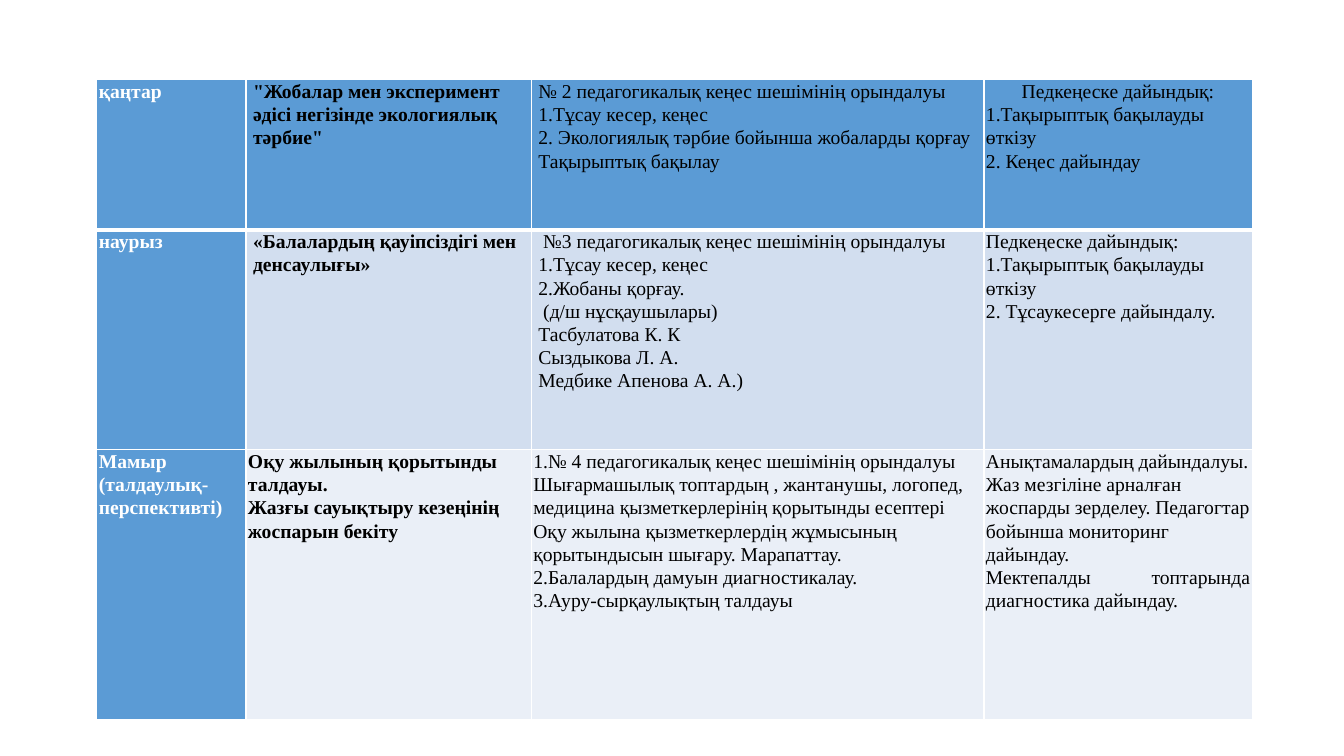
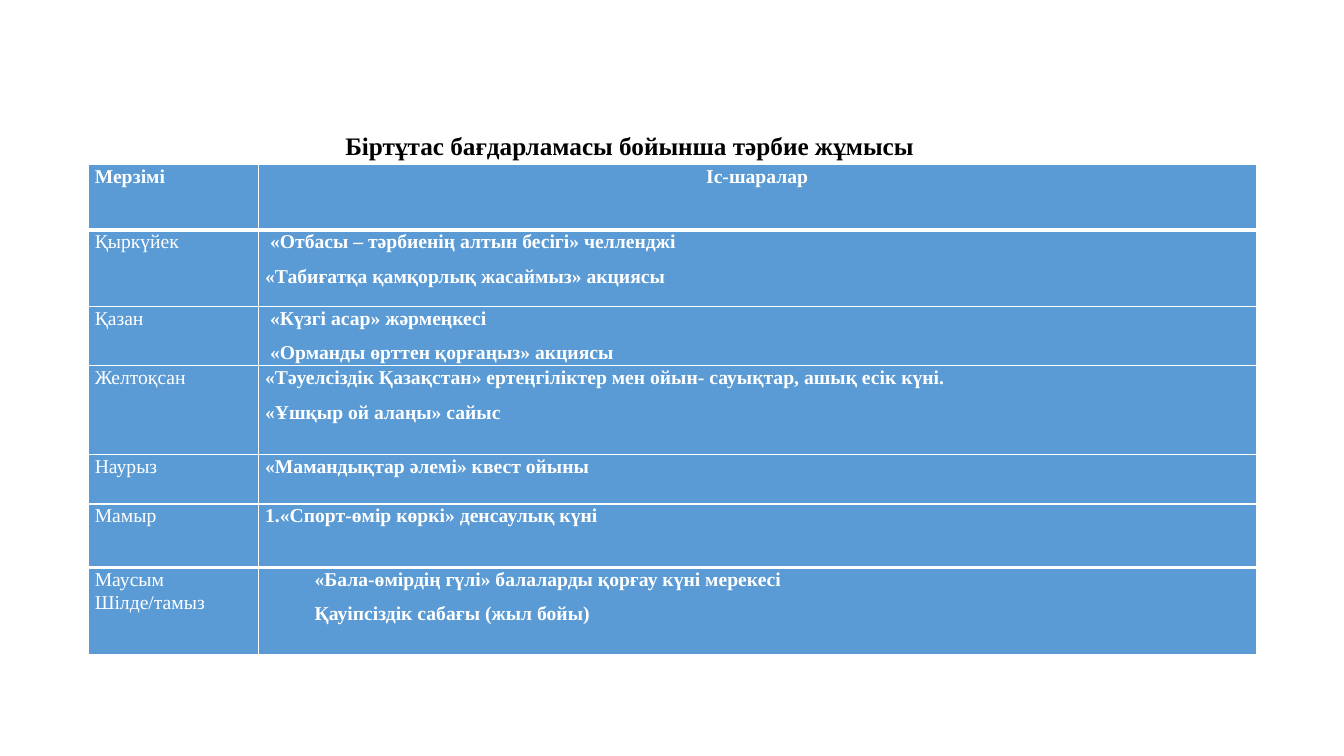
from dataclasses import dataclass, replace
from typing import Optional, Union

from lxml.etree import SubElement
from pptx import Presentation
from pptx.dml.color import RGBColor
from pptx.enum.text import MSO_ANCHOR, PP_ALIGN
from pptx.oxml.ns import qn
from pptx.util import Inches, Pt

BLUE = RGBColor(0x5B, 0x9B, 0xD5)
MID_BLUE = RGBColor(0xD2, 0xDE, 0xEF)
PALE_BLUE = RGBColor(0xEA, 0xEF, 0xF7)
WHITE = RGBColor(0xFF, 0xFF, 0xFF)
BLACK = RGBColor(0x00, 0x00, 0x00)
FONT = "Times New Roman"
BODY_SIZE = 14
TITLE_SIZE = 18
LINE_SPACING = 1.07
THIN, THICK = 1, 3


@dataclass(frozen=True)
class Style:
    inset: float
    color: RGBColor = WHITE
    bold: bool = False
    after: float = 0
    indent: float = 0
    align: Optional[PP_ALIGN] = None


@dataclass(frozen=True)
class Para:
    """A paragraph whose alignment differs from the rest of its cell."""
    text: str
    align: PP_ALIGN


@dataclass(frozen=True)
class Cell:
    paras: tuple[Union[str, Para], ...]
    style: Style
    fill: RGBColor = BLUE


@dataclass(frozen=True)
class Grid:
    left: float
    top: float
    cols: tuple[float, ...]
    rows: tuple[float, ...]
    cells: list[list[Cell]]
    thick_rules: tuple[int, ...]  # numbers of the rows above a thick rule


def add_run(p, text: str, size: float, color: RGBColor, bold: bool) -> None:
    r = p.add_run()
    r.text = text
    r.font.name = FONT
    r.font.size = Pt(size)
    r.font.bold = bold
    r.font.color.rgb = color


def fill_cell(cell, content: Cell) -> None:
    style = content.style
    cell.margin_left = cell.margin_right = Inches(style.inset)
    cell.margin_top = cell.margin_bottom = 0
    cell.fill.solid()
    cell.fill.fore_color.rgb = content.fill
    tf = cell.text_frame
    for i, item in enumerate(content.paras):
        para = item if isinstance(item, Para) else Para(item, style.align)
        p = tf.paragraphs[0] if i == 0 else tf.add_paragraph()
        p.alignment = para.align
        p.line_spacing = LINE_SPACING
        p.space_after = Pt(style.after)
        if style.indent:
            p._p.get_or_add_pPr().set("marL", str(Inches(style.indent)))
        add_run(p, para.text, BODY_SIZE, style.color, style.bold)


def set_borders(cell, top: float, bottom: float) -> None:
    tc_pr = cell._tc.get_or_add_tcPr()
    sides = {"a:lnL": THIN, "a:lnR": THIN, "a:lnT": top, "a:lnB": bottom}
    for i, (tag, width) in enumerate(sides.items()):
        ln = SubElement(tc_pr, qn(tag), w=str(Pt(width)))
        SubElement(SubElement(ln, qn("a:solidFill")), qn("a:srgbClr"), val=str(WHITE))
        tc_pr.insert(i, ln)  # borders come before the fill


def add_grid(s, grid: Grid) -> None:
    table = s.shapes.add_table(
        len(grid.rows), len(grid.cols), Inches(grid.left), Inches(grid.top),
        Inches(sum(grid.cols)), Inches(sum(grid.rows))).table
    table.first_row = table.horz_banding = False
    for column, width in zip(table.columns, grid.cols):
        column.width = Inches(width)
    for n, (row, height) in enumerate(zip(table.rows, grid.rows)):
        row.height = Inches(height)
        top = THICK if n - 1 in grid.thick_rules else THIN
        bottom = THICK if n in grid.thick_rules else THIN
        for cell, content in zip(row.cells, grid.cells[n]):
            fill_cell(cell, content)
            set_borders(cell, top, bottom)


def add_title(s, text: str) -> None:
    tf = s.shapes.add_textbox(Inches(3.02), Inches(1.24), Inches(6.45), Inches(0.41)).text_frame
    tf.word_wrap = True
    tf.vertical_anchor = MSO_ANCHOR.MIDDLE
    tf.margin_left = tf.margin_right = Inches(0.07)
    tf.margin_top = tf.margin_bottom = Inches(0.04)
    p = tf.paragraphs[0]
    p.alignment = PP_ALIGN.CENTER
    add_run(p, text, TITLE_SIZE, BLACK, True)


MONTH = Style(0.02, bold=True)
TIGHT = Style(0.02, BLACK)
WIDE = Style(0.07, BLACK)
TIGHT_THEME, WIDE_THEME = replace(TIGHT, bold=True), replace(WIDE, bold=True)

COUNCILS = Grid(
    0.96, 0.79, (1.48, 2.83, 4.49, 2.66), (1.49, 2.18, 2.68),
    [
        [
            Cell(("қаңтар",), MONTH),
            Cell(("\"Жобалар мен эксперимент әдісі негізінде экологиялық тәрбие\"",), WIDE_THEME),
            Cell(("№ 2 педагогикалық кеңес шешімінің орындалуы",
                  "1.Тұсау кесер, кеңес",
                  "2. Экологиялық тәрбие бойынша жобаларды қорғау",
                  "Тақырыптық бақылау"), WIDE),
            Cell((Para("Педкеңеске дайындық:", PP_ALIGN.CENTER),
                  "1.Тақырыптық бақылауды өткізу",
                  "2. Кеңес дайындау"), TIGHT),
        ],
        [
            Cell(("наурыз",), MONTH),
            Cell(("«Балалардың қауіпсіздігі мен денсаулығы»",), WIDE_THEME, MID_BLUE),
            Cell((" №3 педагогикалық кеңес шешімінің орындалуы",
                  "1.Тұсау кесер, кеңес",
                  "2.Жобаны қорғау.",
                  " (д/ш нұсқаушылары)",
                  "Тасбулатова К. К",
                  "Сыздыкова Л. А.",
                  "Медбике Апенова А. А.)"), WIDE, MID_BLUE),
            Cell(("Педкеңеске дайындық:",
                  "1.Тақырыптық бақылауды өткізу",
                  "2. Тұсаукесерге дайындалу."), TIGHT, MID_BLUE),
        ],
        [
            Cell(("Мамыр", "(талдаулық-перспективті)"), MONTH),
            Cell(("Оқу жылының қорытынды талдауы.",
                  "Жазғы сауықтыру кезеңінің жоспарын бекіту"), TIGHT_THEME, PALE_BLUE),
            Cell(("1.№ 4 педагогикалық кеңес шешімінің орындалуы",
                  "Шығармашылық топтардың , жантанушы, логопед, "
                  "медицина қызметкерлерінің қорытынды есептері",
                  "Оқу жылына қызметкерлердің жұмысының қорытындысын шығару. Марапаттау.",
                  "2.Балалардың дамуын диагностикалау.",
                  "3.Ауру-сырқаулықтың талдауы"), TIGHT, PALE_BLUE),
            Cell(("Анықтамалардың дайындалуы. Жаз мезгіліне арналған жоспарды "
                  "зерделеу. Педагогтар бойынша мониторинг дайындау.",
                  Para("Мектепалды топтарында диагностика дайындау.", PP_ALIGN.JUSTIFY)),
                 TIGHT, PALE_BLUE),
        ],
    ],
    thick_rules=(0,))

PERIOD = Style(0.06)
HEADER = replace(PERIOD, bold=True)
EVENT = Style(0.07, bold=True, after=8)
SUMMER_EVENT = replace(EVENT, inset=0.06, indent=0.5)

EVENTS = Grid(
    0.88, 1.63, (1.68, 9.9), (0.65, 0.76, 0.59, 0.88, 0.49, 0.63, 0.87),
    [
        [Cell(("Мерзімі",), HEADER),
         Cell(("Іс-шаралар",), replace(HEADER, align=PP_ALIGN.CENTER))],
        [Cell(("Қыркүйек",), PERIOD),
         Cell((" «Отбасы – тәрбиенің алтын бесігі» челленджі",
               "«Табиғатқа қамқорлық жасаймыз» акциясы"), EVENT)],
        [Cell(("Қазан",), PERIOD),
         Cell((" «Күзгі асар» жәрмеңкесі",
               " «Орманды өрттен қорғаңыз» акциясы"), EVENT)],
        [Cell(("Желтоқсан",), PERIOD),
         Cell(("«Тәуелсіздік Қазақстан» ертеңгіліктер мен ойын- сауықтар, ашық есік күні.",
               "«Ұшқыр ой алаңы» сайыс"), EVENT)],
        [Cell(("Наурыз",), PERIOD),
         Cell(("«Мамандықтар әлемі» квест ойыны",), EVENT)],
        [Cell(("Мамыр",), PERIOD),
         Cell(("1.«Спорт-өмір көркі» денсаулық күні",), EVENT)],
        [Cell(("Маусым", "Шілде/тамыз"), PERIOD),
         Cell(("«Бала-өмірдің гүлі» балаларды қорғау күні мерекесі",
               "Қауіпсіздік сабағы (жыл бойы)"), SUMMER_EVENT)],
    ],
    thick_rules=(0, 5))


def main() -> None:
    prs = Presentation()
    prs.slide_width, prs.slide_height = Inches(13.33), Inches(7.5)
    blank = prs.slide_layouts[6]
    add_grid(prs.slides.add_slide(blank), COUNCILS)
    s = prs.slides.add_slide(blank)
    add_grid(s, EVENTS)
    add_title(s, "Біртұтас бағдарламасы бойынша тәрбие жұмысы")
    prs.save("out.pptx")


if __name__ == "__main__":
    main()
